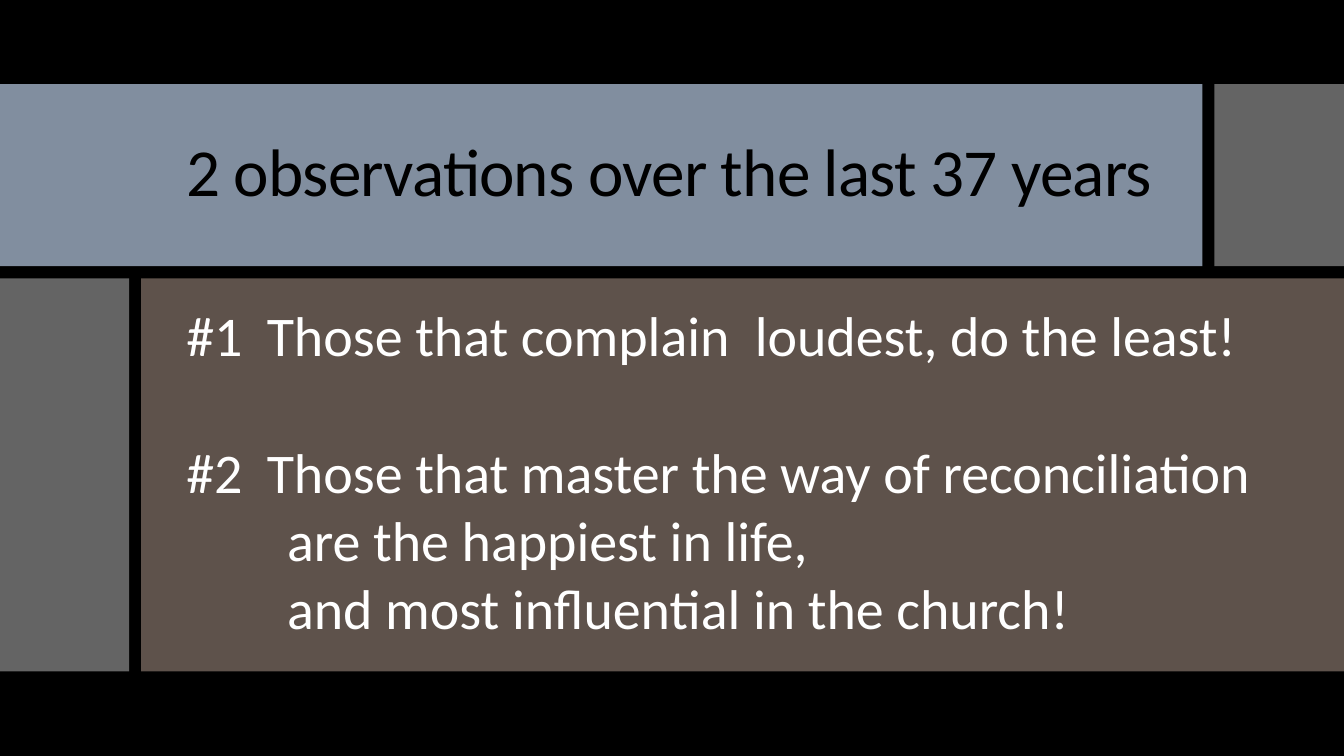
from dataclasses import dataclass

from lxml import etree
from pptx import Presentation
from pptx.dml.color import RGBColor
from pptx.enum.shapes import MSO_SHAPE
from pptx.enum.text import MSO_ANCHOR
from pptx.oxml.ns import qn
from pptx.util import Pt

RECTANGLE = MSO_SHAPE.RECTANGLE
MIDDLE = MSO_ANCHOR.MIDDLE


@dataclass(frozen=True)
class Theme:
    font: str = "Calibri"
    black: str = "000000"
    white: str = "FFFFFF"
    slate: str = "818E9F"
    grey: str = "C8C8C8"
    brown: str = "9D897D"
    title_size: float = 48
    body_size: float = 40
    line_spacing: float = 0.9


def write(paragraph, text, *, theme, size, color, after=0, left=0, hanging=0,
          tracking=None):
    """Fill a paragraph; hanging is how far its first line starts before left."""
    paragraph.line_spacing = theme.line_spacing
    paragraph.space_after = Pt(after)
    properties = paragraph._p.get_or_add_pPr()
    properties.set("marL", str(Pt(left)))
    properties.set("indent", str(-Pt(hanging)))
    run = paragraph.add_run()
    run.text = text
    run.font.name = theme.font
    run.font.size = Pt(size)
    run.font.color.rgb = RGBColor.from_string(color)
    if tracking is not None:
        run._r.get_or_add_rPr().set("spc", str(round(tracking * 100)))


class SlideBuilder:
    def __init__(self, slide, theme):
        self.slide = slide
        self.theme = theme

    def background(self, color):
        fill = self.slide.background.fill
        fill.solid()
        fill.fore_color.rgb = RGBColor.from_string(color)

    def tile(self, left, top, width, height, color, opacity=100):
        tile = self.slide.shapes.add_shape(
            RECTANGLE, Pt(left), Pt(top), Pt(width), Pt(height))
        tile.shadow.inherit = False
        tile.line.fill.background()
        tile.fill.solid()
        tile.fill.fore_color.rgb = RGBColor.from_string(color)
        if opacity < 100:
            rgb = tile._element.spPr.find(qn("a:solidFill")).find(qn("a:srgbClr"))
            etree.SubElement(rgb, qn("a:alpha")).set("val", str(opacity * 1000))

    def text(self, left, top, width, height, lines, **style):
        """Add middle-anchored text; lines holds (wording, paragraph options)."""
        box = self.slide.shapes.add_textbox(
            Pt(left), Pt(top), Pt(width), Pt(height))
        frame = box.text_frame
        frame.word_wrap = True
        frame.vertical_anchor = MIDDLE
        for index, (wording, options) in enumerate(lines):
            paragraph = frame.add_paragraph() if index else frame.paragraphs[0]
            write(paragraph, wording, theme=self.theme, **{**style, **options})


def main():
    slide_width, slide_height = 960, 540
    gap = 8.6
    header_top, header_height, header_width = 60, 130.2, 858.9
    body_top = header_top + header_height + gap
    body_height = 280.8
    side_width = 92.2
    corner_left = header_width + gap
    panel_left = side_width + gap
    text_left = 126

    deck = Presentation()
    deck.slide_width, deck.slide_height = Pt(slide_width), Pt(slide_height)
    theme = Theme()
    builder = SlideBuilder(deck.slides.add_slide(deck.slide_layouts[6]), theme)

    builder.background(theme.black)
    builder.tile(0, header_top, header_width, header_height, theme.slate)
    builder.tile(corner_left, header_top, slide_width - corner_left,
                 header_height, theme.grey, 50)
    builder.tile(0, body_top, side_width, body_height, theme.grey, 50)
    builder.tile(panel_left, body_top, slide_width - panel_left,
                 body_height, theme.brown, 60)

    builder.text(text_left, 85.7, 707, 78.5,
                 [("2 observations over the last 37 years", {})],
                 size=theme.title_size, color=theme.black, tracking=-0.6)

    numbered = {"left": 57.5, "hanging": 57.5}
    continued = {"left": 72}
    observations = [
        ("#1\tThose that complain  loudest, do the least!",
         {**numbered, "after": 54.7}),
        ("#2\tThose that master the way of reconciliation", numbered),
        ("are the happiest in life,", continued),
        ("and most influential in the church!", continued),
    ]
    builder.text(text_left, body_top, 801, body_height, observations,
                 size=theme.body_size, color=theme.white, after=5.4)

    deck.save("out.pptx")


if __name__ == "__main__":
    main()
